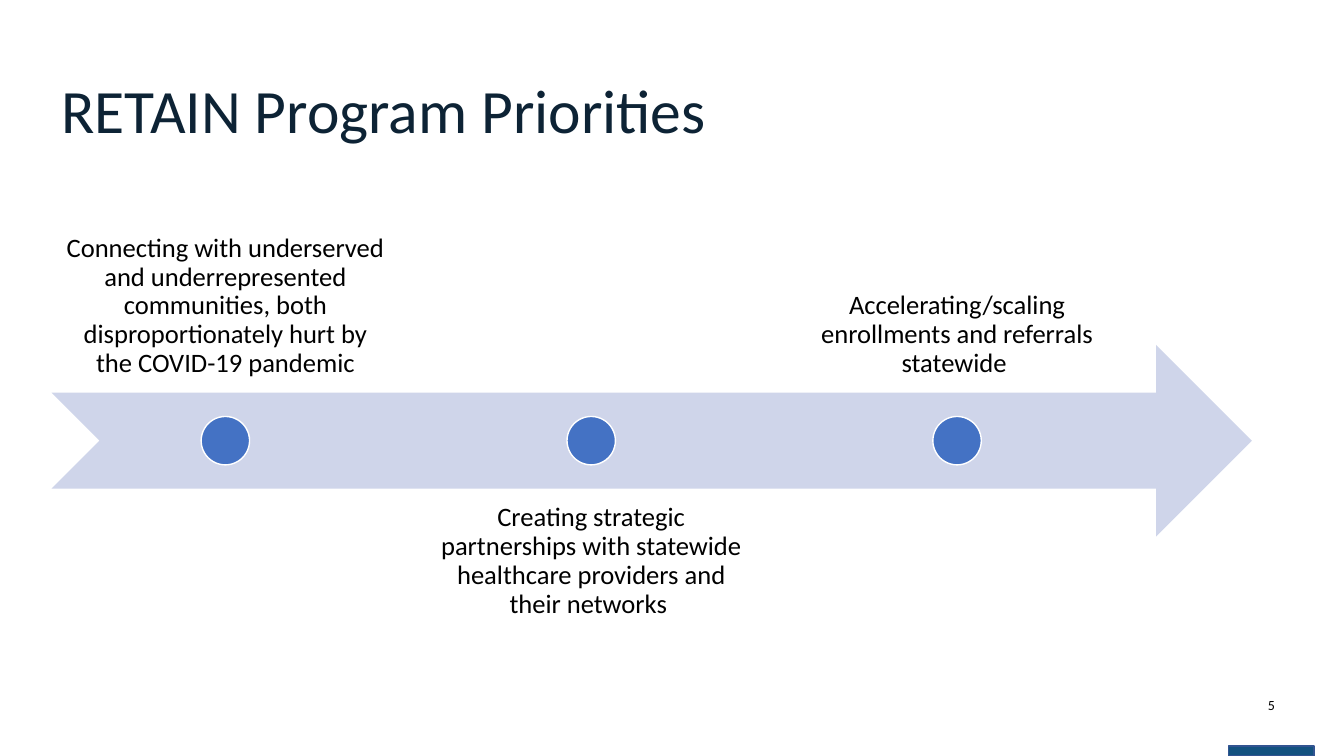
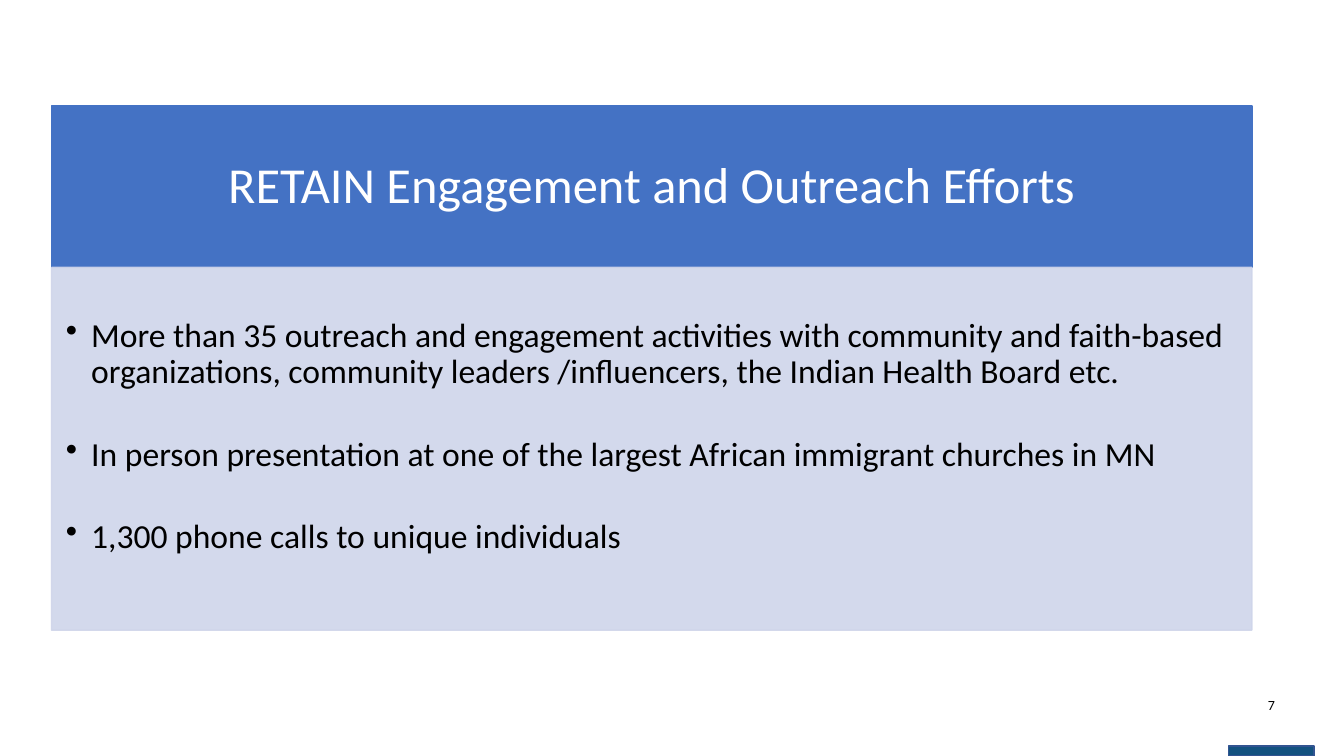
from dataclasses import dataclass

from lxml import etree
from pptx import Presentation
from pptx.dml.color import RGBColor
from pptx.enum import shapes, text
from pptx.oxml import ns
from pptx.util import Cm, Pt

COLORS = {
    "title": "0D2335",
    "footer": "135280",
    "footer_line": "325491",
    "accent": "4472C4",
    "pale": "CFD5EA",
    "black": "000000",
    "white": "FFFFFF",
}
FONT = "Calibri"
LEFT, WIDTH = 1.3, 30.25
FOOTER_LEFT, FOOTER_WIDTH = 30.96, 2.16
ARROW_TOP, ARROW_HEIGHT = 8.69, 4.83
LABEL_WIDTH, LABEL_STEP, LABEL_HEIGHT = 8.76, 9.22, 4.83
DOT_SIZE = 1.22


@dataclass(frozen=True)
class Box:
    """A rectangle on the slide, in centimetres."""
    left: float
    top: float
    width: float
    height: float

    def lengths(self):
        return Cm(self.left), Cm(self.top), Cm(self.width), Cm(self.height)


@dataclass(frozen=True)
class TextStyle:
    size: float
    color: str = "black"
    align: text.PP_ALIGN = text.PP_ALIGN.CENTER
    anchor: text.MSO_ANCHOR = text.MSO_ANCHOR.TOP
    line_spacing: float = 0.9
    space_after: float = 0
    insets: tuple[float, float, float, float] = (0.25, 0.13, 0.25, 0.13)
    indent: float = 0  # hanging indent of a bullet; 0 means no bullet


@dataclass(frozen=True)
class Milestone:
    label: str
    above: bool


TITLE = TextStyle(44, "title", text.PP_ALIGN.LEFT, text.MSO_ANCHOR.MIDDLE)
HEADER = TextStyle(36, "white", anchor=text.MSO_ANCHOR.MIDDLE,
                   insets=(0.71, 0.41, 0.71, 0.41))
BULLETS = TextStyle(24, align=text.PP_ALIGN.LEFT, space_after=33,
                    insets=(0.36, 1.28, 0.48, 0.53), indent=0.64)
PAGE_NUMBER = TextStyle(10, line_spacing=1)

MILESTONES = [
    Milestone("Connecting with underserved and underrepresented communities, "
              "both disproportionately hurt by the COVID-19 pandemic", True),
    Milestone("Creating strategic partnerships with statewide healthcare "
              "providers and their networks ", False),
    Milestone("Accelerating/scaling enrollments and referrals statewide ", True),
]
EFFORTS = [
    "More than 35 outreach and engagement activities with community and "
    "faith-based organizations, community leaders /influencers, "
    "the Indian Health Board etc.",
    "In person presentation at one of the largest African immigrant churches in MN",
    "1,300 phone calls to unique individuals",
]


def rgb(name: str) -> RGBColor:
    return RGBColor.from_string(COLORS[name])


def add_bullet(paragraph, indent: float) -> None:
    properties = paragraph._p.get_or_add_pPr()
    properties.set("marL", str(Cm(indent)))
    properties.set("indent", str(-Cm(indent)))
    etree.SubElement(properties, ns.qn("a:buChar")).set("char", "•")


def set_alpha(shape, percent: int) -> None:
    """Make the solid fill and line of a shape partly transparent."""
    for color in shape._element.spPr.iter(ns.qn("a:srgbClr")):
        etree.SubElement(color, ns.qn("a:alpha")).set("val", str(percent * 1000))


def write(shape, lines: list[str], style: TextStyle) -> None:
    frame = shape.text_frame
    frame.text = "\n".join(lines)
    frame.word_wrap = True
    frame.vertical_anchor = style.anchor
    (frame.margin_left, frame.margin_top,
     frame.margin_right, frame.margin_bottom) = map(Cm, style.insets)
    for paragraph in frame.paragraphs:
        paragraph.alignment = style.align
        paragraph.line_spacing = style.line_spacing
        paragraph.space_after = Pt(style.space_after)
        if style.indent:
            add_bullet(paragraph, style.indent)
        for run in paragraph.runs:
            run.font.name = FONT
            run.font.size = Pt(style.size)
            run.font.color.rgb = rgb(style.color)


def add_text(slide, box: Box, content: str, style: TextStyle) -> None:
    write(slide.shapes.add_textbox(*box.lengths()), [content], style)


def add_shape(slide, kind: shapes.MSO_SHAPE, box: Box, fill: str,
              line: str | None = None):
    shape = slide.shapes.add_shape(kind, *box.lengths())
    shape.shadow.inherit = False
    shape.fill.solid()
    shape.fill.fore_color.rgb = rgb(fill)
    if line:
        shape.line.color.rgb = rgb(line)
        shape.line.width = Pt(1)
    else:
        shape.line.fill.background()
    return shape


def add_slide(presentation, number: int):
    """Add a blank slide with the footer band and the page number."""
    slide = presentation.slides.add_slide(presentation.slide_layouts[6])
    add_shape(slide, shapes.MSO_SHAPE.RECTANGLE,
              Box(FOOTER_LEFT, 18.8, FOOTER_WIDTH, 0.25), "footer", "footer_line")
    add_text(slide, Box(FOOTER_LEFT, 17.42, FOOTER_WIDTH, 0.69),
             str(number), PAGE_NUMBER)
    return slide


def add_milestone(slide, index: int, milestone: Milestone) -> None:
    left = LEFT + index * LABEL_STEP
    top = 5.08 if milestone.above else 12.32
    anchor = text.MSO_ANCHOR.BOTTOM if milestone.above else text.MSO_ANCHOR.TOP
    add_text(slide, Box(left, top, LABEL_WIDTH, LABEL_HEIGHT), milestone.label,
             TextStyle(19, anchor=anchor, insets=(0.38,) * 4))
    add_shape(slide, shapes.MSO_SHAPE.OVAL,
              Box(left + (LABEL_WIDTH - DOT_SIZE) / 2,
                  ARROW_TOP + (ARROW_HEIGHT - DOT_SIZE) / 2, DOT_SIZE, DOT_SIZE),
              "accent", "white")


def build_priorities(presentation) -> None:
    slide = add_slide(presentation, 5)
    add_text(slide, Box(LEFT, 1.02, WIDTH, 3.68), "RETAIN Program Priorities", TITLE)
    add_shape(slide, shapes.MSO_SHAPE.NOTCHED_RIGHT_ARROW,
              Box(LEFT, ARROW_TOP, WIDTH, ARROW_HEIGHT), "pale")
    for index, milestone in enumerate(MILESTONES):
        add_milestone(slide, index, milestone)


def build_outreach(presentation) -> None:
    slide = add_slide(presentation, 7)
    header = add_shape(slide, shapes.MSO_SHAPE.RECTANGLE,
                       Box(LEFT, 2.67, WIDTH, 4.08), "accent", "accent")
    write(header, ["RETAIN Engagement and Outreach Efforts"], HEADER)
    panel = add_shape(slide, shapes.MSO_SHAPE.RECTANGLE,
                      Box(LEFT, 6.74, WIDTH, 9.14), "pale", "pale")
    set_alpha(panel, 90)
    write(panel, EFFORTS, BULLETS)


def main() -> None:
    presentation = Presentation()
    presentation.slide_width = Cm(33.87)
    presentation.slide_height = Cm(19.05)
    build_priorities(presentation)
    build_outreach(presentation)
    presentation.save("out.pptx")


if __name__ == "__main__":
    main()
